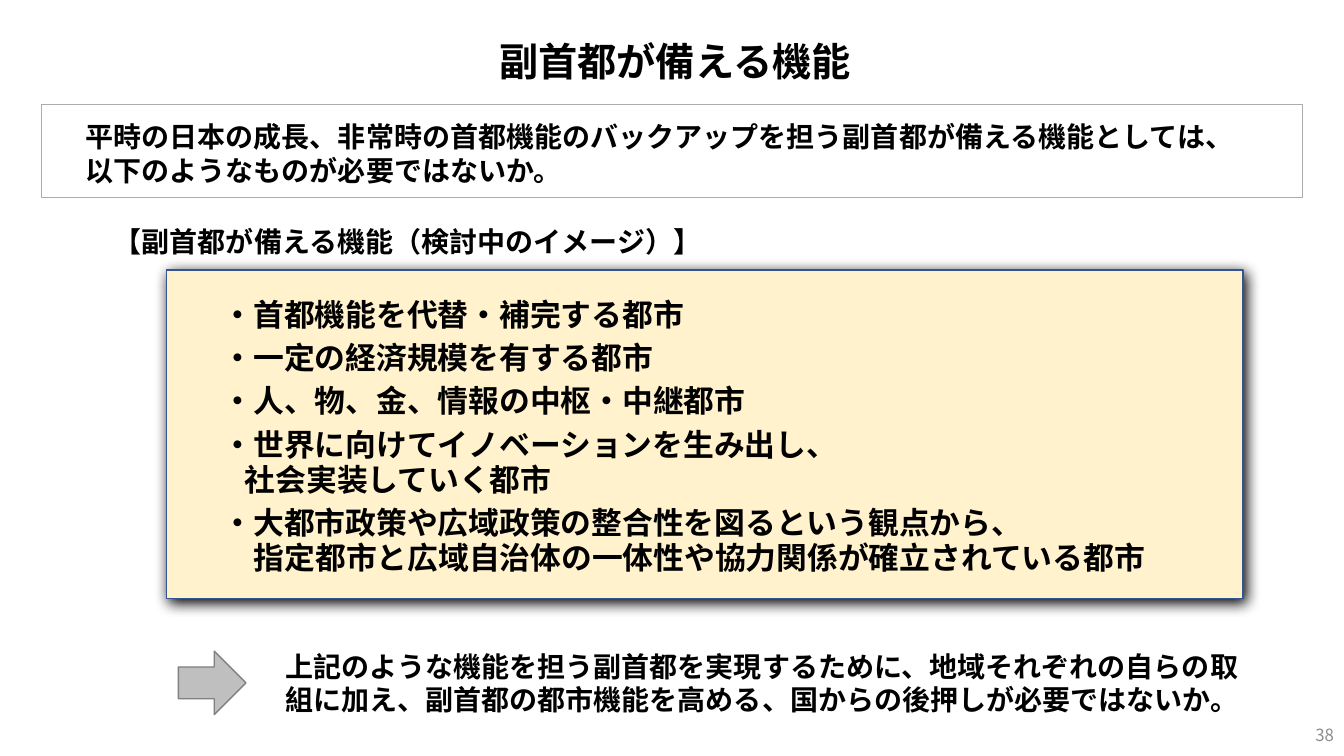
from lxml import etree
from pptx import Presentation
from pptx.dml.color import RGBColor
from pptx.enum.shapes import MSO_SHAPE
from pptx.enum.text import MSO_ANCHOR, PP_ALIGN
from pptx.oxml.ns import qn
from pptx.util import Inches, Pt

RECTANGLE, RIGHT_ARROW = MSO_SHAPE.RECTANGLE, MSO_SHAPE.RIGHT_ARROW
LEFT, CENTER, RIGHT = PP_ALIGN.LEFT, PP_ALIGN.CENTER, PP_ALIGN.RIGHT
TOP, MIDDLE = MSO_ANCHOR.TOP, MSO_ANCHOR.MIDDLE

BLACK = RGBColor(0x00, 0x00, 0x00)
CREAM = RGBColor(0xFF, 0xF2, 0xCC)
NAVY = RGBColor(0x32, 0x54, 0x91)
FRAME_GRAY = RGBColor(0xAF, 0xAB, 0xAB)
ARROW_GRAY = RGBColor(0xBF, 0xBF, 0xBF)
ARROW_EDGE = RGBColor(0x80, 0x80, 0x80)
NUMBER_GRAY = RGBColor(0x8C, 0x8C, 0x8C)

FONT = "Noto Sans CJK JP"
SLIDE_W, SLIDE_H = 13.33, 7.5

# Each function with the hanging indent of its second line, in inches
FUNCTIONS = [
    ("・首都機能を代替・補完する都市", 0),
    ("・一定の経済規模を有する都市", 0),
    ("・人、物、金、情報の中枢・中継都市", 0),
    ("・世界に向けてイノベーションを生み出し、\v社会実装していく都市", 0.22),
    ("・大都市政策や広域政策の整合性を図るという観点から、\v"
     "指定都市と広域自治体の一体性や協力関係が確立されている都市", 0.31),
]


def add_text(slide, box, lines, size, color=BLACK, bold=True, align=LEFT, anchor=TOP):
    frame = slide.shapes.add_textbox(*map(Inches, box)).text_frame
    frame.word_wrap = True
    frame.vertical_anchor = anchor
    for i, line in enumerate(lines):
        paragraph = frame.paragraphs[0] if i == 0 else frame.add_paragraph()
        paragraph.text = line
        paragraph.alignment = align
        font = paragraph.font
        font.size, font.bold, font.name = Pt(size), bold, FONT
        font.color.rgb = color
        # East Asian typeface
        latin = paragraph._p.pPr.find(qn("a:defRPr")).find(qn("a:latin"))
        latin.addnext(latin.makeelement(qn("a:ea"), {"typeface": FONT}))
    return frame


def add_figure(slide, preset, box, line, width, fill=None):
    figure = slide.shapes.add_shape(preset, *map(Inches, box))
    figure.shadow.inherit = False
    if fill is None:
        figure.fill.background()
    else:
        figure.fill.solid()
        figure.fill.fore_color.rgb = fill
    figure.line.color.rgb = line
    figure.line.width = Pt(width)
    return figure


def add_drop_shadow(figure, blur, distance, degrees):
    effects = figure._element.spPr.find(qn("a:effectLst"))
    shadow = etree.SubElement(effects, qn("a:outerShdw"), {
        "blurRad": str(Pt(blur)), "dist": str(Pt(distance)),
        "dir": str(degrees * 60000), "algn": "tl", "rotWithShape": "0"})
    etree.SubElement(shadow, qn("a:srgbClr"), {"val": str(BLACK)})


def add_heading(slide, box):
    add_text(slide, box, ["副首都が備える機能"], 28, align=CENTER)


def add_question(slide, box):
    left, top, width, height = box
    add_figure(slide, RECTANGLE, box, FRAME_GRAY, 0.5)
    add_text(slide, (left + 0.34, top + 0.1, width - 0.34, height - 0.15), [
        "平時の日本の成長、非常時の首都機能のバックアップを担う副首都が備える機能としては、",
        "以下のようなものが必要ではないか。"], 20)


def add_functions(slide, box):
    left, top, width, height = box
    add_text(slide, (left - 0.62, top - 0.5, width - 1.1, 0.44),
             ["【副首都が備える機能（検討中のイメージ）】"], 20)
    panel = add_figure(slide, RECTANGLE, box, NAVY, 1, CREAM)
    add_drop_shadow(panel, 10, 3, 45)
    frame = add_text(slide, (left + 0.46, top + 0.22, width - 1.1, height - 0.37),
                     [text for text, _ in FUNCTIONS], 22)
    for i, (paragraph, (_, hang)) in enumerate(zip(frame.paragraphs, FUNCTIONS)):
        paragraph.line_spacing = Pt(25)
        paragraph.space_before = Pt(6 if i else 0)
        if hang:
            properties = paragraph._p.pPr
            properties.set("marL", str(Inches(hang)))
            properties.set("indent", str(-Inches(hang)))


def add_conclusion(slide, box):
    left, top, width, height = box
    add_figure(slide, RIGHT_ARROW, (left, top + 0.07, 0.67, 0.63),
               ARROW_EDGE, 1, ARROW_GRAY)
    add_text(slide, (left + 0.96, top, width - 0.96, height), [
        "上記のような機能を担う副首都を実現するために、地域それぞれの自らの取"
        "組に加え、副首都の都市機能を高める、国からの後押しが必要ではないか。"], 20)


def add_page_number(slide, box):
    add_text(slide, box, ["38"], 12, NUMBER_GRAY, False, RIGHT, MIDDLE)


def main():
    deck = Presentation()
    deck.slide_width, deck.slide_height = Inches(SLIDE_W), Inches(SLIDE_H)
    slide = deck.slides.add_slide(deck.slide_layouts[6])
    add_heading(slide, (0.03, 0.32, SLIDE_W, 0.57))
    add_question(slide, (0.41, 1.04, 12.51, 0.92))
    add_functions(slide, (1.65, 2.68, 10.68, 3.26))
    add_conclusion(slide, (1.77, 6.39, 10.63, 0.77))
    add_page_number(slide, (SLIDE_W - 3, 7.09, 3, 0.4))
    deck.save("out.pptx")


if __name__ == "__main__":
    main()
